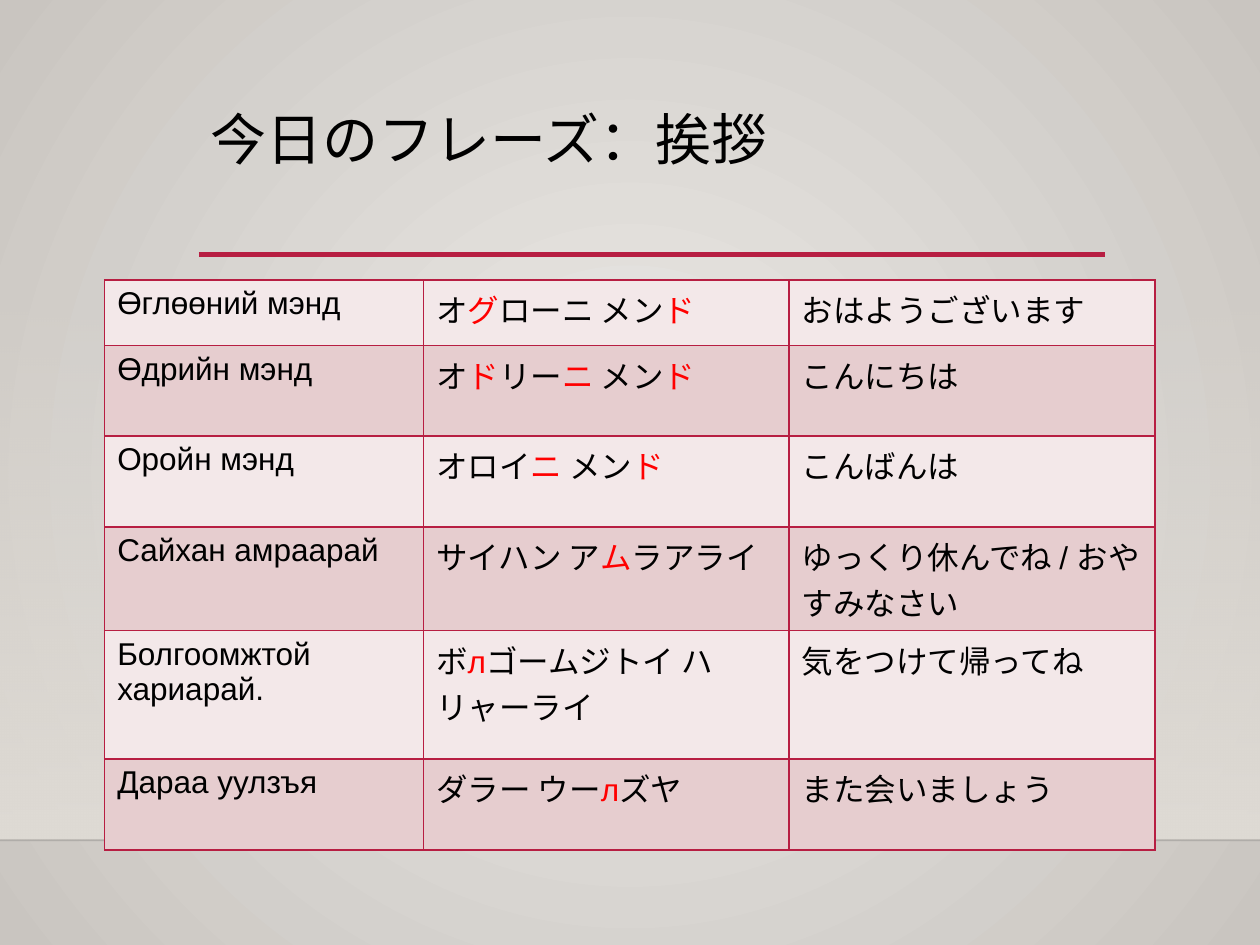
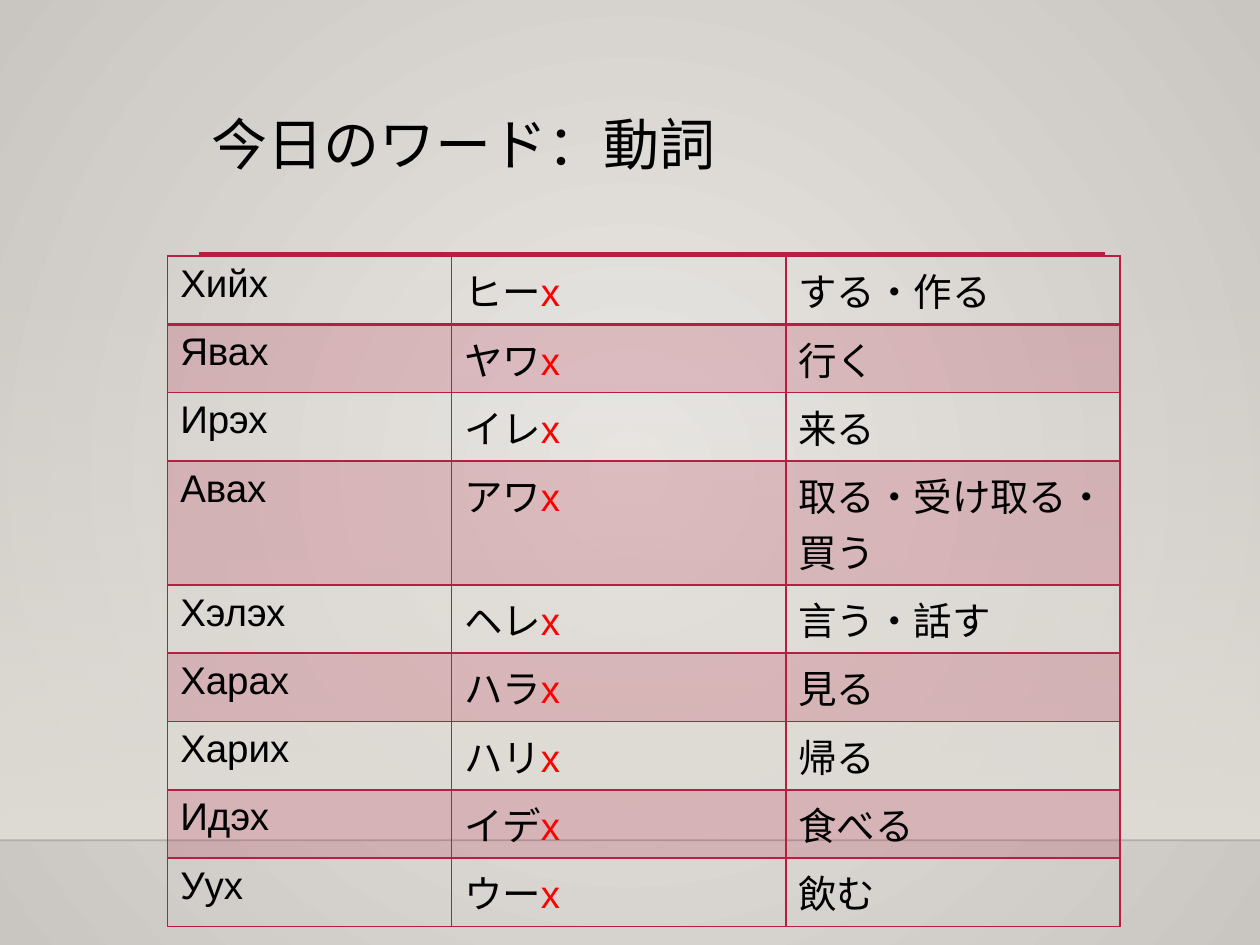
import pptx
import pptx.util
import pptx.dml.color
import pptx.enum.shapes
import pptx.enum.text
import pptx.oxml
import pptx.oxml.ns

Cm = pptx.util.Cm
Pt = pptx.util.Pt
RGB = pptx.dml.color.RGBColor
qn = pptx.oxml.ns.qn

# Colours
BLACK = RGB(0x00, 0x00, 0x00)
INK = RGB(0x00, 0x00, 0x01)
RED = RGB(0xFF, 0x00, 0x00)
WINE = RGB(0xB7, 0x1E, 0x42)
PALE = RGB(0xF3, 0xE8, 0xE9)
PINK = RGB(0xE6, 0xCD, 0xCF)
GLOW = RGB(0xEB, 0xE9, 0xE6)
EDGE = RGB(0xC9, 0xC5, 0xC0)
WALL = RGB(0xDF, 0xDB, 0xD5)

WIDTH, HEIGHT = 25.4, 19.05
FLOOR = 16.94

# Text between asterisks is red
PHRASES = [
    ("Өглөөний мэнд", "オ*グ*ローニ メン*ド*", "おはようございます"),
    ("Өдрийн мэнд", "オ*ド*リー*ニ* メン*ド*", "こんにちは"),
    ("Оройн мэнд", "オロイ*ニ* メン*ド*", "こんばんは"),
    ("Сайхан амраарай", "サイハン ア*ム*ラアライ", "ゆっくり休んでね / おやすみなさい"),
    ("Болгоомжтой хариарай.", "ボ*л*ゴームジトイ ハリャーライ", "気をつけて帰ってね"),
    ("Дараа уулзъя", "ダラー ウー*л*ズヤ", "また会いましょう"),
]
VERBS = [
    ("Хийх", "ヒー*х*", "する・作る"),
    ("Явах", "ヤワ*х*", "行く"),
    ("Ирэх", "イレ*х*", "来る"),
    ("Авах", "アワ*х*", "取る・受け取る・買う"),
    ("Хэлэх", "ヘレ*х*", "言う・話す"),
    ("Харах", "ハラ*х*", "見る"),
    ("Харих", "ハリ*х*", "帰る"),
    ("Идэх", "イデ*х*", "食べる"),
    ("Уух", "ウー*х*", "飲む"),
]


def make(tag, parent=None, **attrs):
    """Create an XML element, appended to its parent if there is one."""
    node = pptx.oxml.parse_xml(f'<{tag} {pptx.oxml.ns.nsdecls("a")}/>')
    for key, value in attrs.items():
        node.set(key, str(value))
    if parent is not None:
        parent.append(node)
    return node


def fade(node, percent):
    """Set the opacity of every colour inside an element."""
    for color in node.iter(qn("a:srgbClr")):
        make("a:alpha", color, val=percent * 1000)


def blend(fill, *colors):
    fill.gradient()
    for stop, color in zip(fill.gradient_stops, colors):
        stop.color.rgb = color


def write(frame, text, size=18, font="Arial", space=None):
    """Write one paragraph; parts between asterisks turn red."""
    para = frame.paragraphs[0]
    para.alignment = pptx.enum.text.PP_ALIGN.LEFT
    para.line_spacing = space
    for i, part in enumerate(text.split("*")):
        if part:
            run = para.add_run()
            run.text = part
            run.font.size = Pt(size)
            run.font.name = font
            run.font.color.rgb = RED if i % 2 else BLACK


def rule(slide, left, right, y, color, weight):
    line = slide.shapes.add_connector(
        pptx.enum.shapes.MSO_CONNECTOR.STRAIGHT,
        Cm(left), Cm(y), Cm(right), Cm(y))
    line.line.color.rgb = color
    line.line.width = Pt(weight)
    make("a:effectLst", line.element.spPr)
    return line


def border(cell, **widths):
    """Draw cell borders; they stand before the fill in the XML."""
    props = cell._tc.get_or_add_tcPr()
    for i, (side, width) in enumerate(widths.items()):
        edge = make(f"a:ln{side}", w=Pt(width))
        make("a:srgbClr", make("a:solidFill", edge), val=WINE)
        props.insert(i, edge)


def paint(cell, color, alpha=100):
    if color is None:
        cell.fill.background()
        return
    cell.fill.solid()
    cell.fill.fore_color.rgb = color
    if alpha < 100:
        fade(cell._tc.tcPr, alpha)


def glow(master):
    """Round gradient behind all slides."""
    blend(master.background.fill, GLOW, EDGE)
    grad = master.element.xpath(".//p:bg//a:gradFill")[0]
    for old in grad.findall(qn("a:lin")):
        grad.remove(old)
    ring = make("a:path", grad, path="circle")
    make("a:fillToRect", ring, l=50000, t=50000, r=50000, b=50000)


def stage(slide):
    """Wall, floor line and title rule."""
    top = 5.59
    wall = slide.shapes.add_shape(
        pptx.enum.shapes.MSO_SHAPE.RECTANGLE,
        0, Cm(top), Cm(WIDTH), Cm(FLOOR - top))
    wall.shadow.inherit = False
    wall.line.fill.background()
    blend(wall.fill, WALL, WALL)
    wall.fill.gradient_angle = 270
    fade(wall.element.spPr.find(".//" + qn("a:gs")), 0)
    fade(rule(slide, 0, WIDTH, FLOOR, INK, 1).element.spPr, 20)
    rule(slide, 4.01, 22.28, 5.13, WINE, 2.5)


def head(slide, text, left, top):
    title = slide.shapes.title
    title.left, title.top = Cm(left), Cm(top)
    title.width, title.height = Cm(18.26), Cm(2.92)
    frame = title.text_frame
    frame.word_wrap = True
    frame.auto_size = pptx.enum.text.MSO_AUTO_SIZE.NONE
    frame.vertical_anchor = pptx.enum.text.MSO_ANCHOR.TOP
    write(frame, text, size=32, font="Cabin", space=0.9)


def grid(slide, rows, left, top, cols, tall, size, bands, alpha=100, first=1):
    """Table with banded rows; first is the weight under the top row."""
    table = slide.shapes.add_table(
        len(rows), len(cols), Cm(left), Cm(top),
        Cm(sum(cols)), Cm(sum(tall))).table
    table.first_row = table.horz_banding = False
    for col, width in zip(table.columns, cols):
        col.width = Cm(width)
    for r, texts in enumerate(rows):
        table.rows[r].height = Cm(tall[r])
        for c, text in enumerate(texts):
            cell = table.cell(r, c)
            write(cell.text_frame, text, size=size)
            paint(cell, bands[r % 2], alpha)
            border(cell, L=1, R=1, T=first if r == 1 else 1,
                   B=first if r == 0 else 1)


def page(deck, text, left, top):
    slide = deck.slides.add_slide(deck.slide_layouts[5])
    stage(slide)
    head(slide, text, left, top)
    return slide


def main():
    deck = pptx.Presentation()
    deck.slide_width, deck.slide_height = Cm(WIDTH), Cm(HEIGHT)
    glow(deck.slide_master)

    # Greetings
    slide = page(deck, "今日のフレーズ：挨拶", 3.99, 2.13)
    grid(slide, PHRASES, 2.11, 5.64, cols=[6.43, 7.37, 7.37],
         tall=[1.32, 1.83, 1.83, 1.83, 2.59, 1.83], size=18,
         bands=(PALE, PINK))

    # Verbs
    slide = page(deck, "今日のワード：動詞", 4.01, 2.24)
    grid(slide, VERBS, 3.38, 5.16, cols=[5.72, 6.74, 6.74],
         tall=[1.19] * 3 + [2.11] + [1.19] * 5, size=22,
         bands=(None, WINE), alpha=20, first=2)

    deck.save("out.pptx")


if __name__ == "__main__":
    main()
